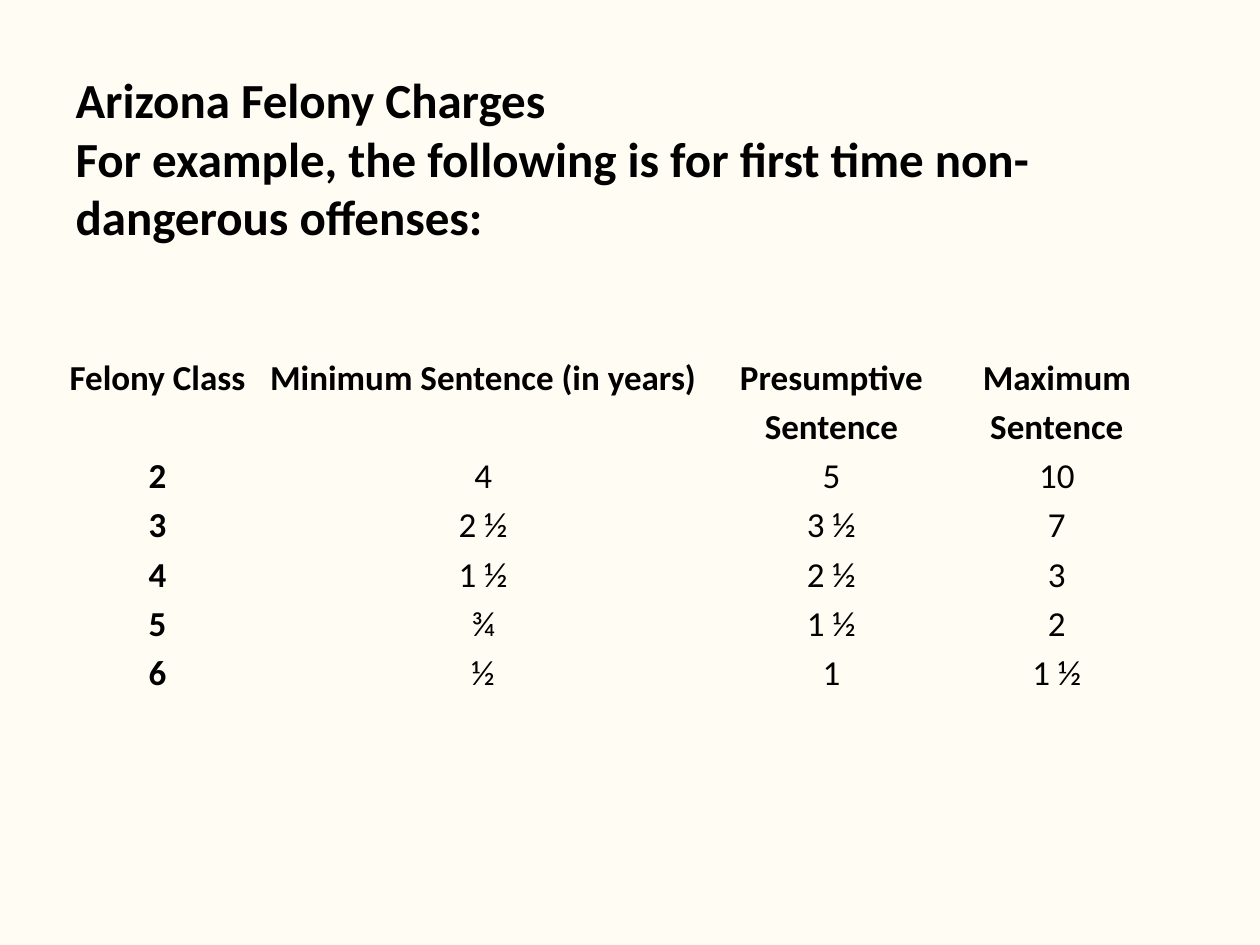
from pptx import Presentation
from pptx.dml.color import RGBColor
from pptx.enum.text import MSO_ANCHOR, MSO_AUTO_SIZE, PP_ALIGN
from pptx.oxml.ns import qn
from pptx.util import Cm, Pt

TOP = MSO_ANCHOR.TOP
NO_FIT = MSO_AUTO_SIZE.NONE
LEFT, CENTER = PP_ALIGN.LEFT, PP_ALIGN.CENTER
PLAIN_STYLE = "{2D5ABB26-0587-4C30-8999-92F81FD0307C}"

TITLE = [
    "Arizona Felony Charges",
    "For example, the following is for first time non-dangerous offenses:",
]
ROWS = [
    ("Felony Class", "Minimum Sentence (in years)", "Presumptive Sentence", "Maximum Sentence"),
    ("2", "4", "5", "10"),
    ("3", "2 ½", "3 ½", "7"),
    ("4", "1 ½", "2 ½", "3"),
    ("5", "¾", "1 ½", "2"),
    ("6", "½", "1", "1 ½"),
]
COL_WIDTHS = [3.81, 9.32, 4.72, 4.37]
HEADER_HEIGHT, ROW_HEIGHT = 1.95, 0.97
MARGIN = 1.27


def color(hex_string):
    return RGBColor.from_string(hex_string)


def format_text(tf, size, bold, align, spacing):
    for p in tf.paragraphs:
        p.alignment = align
        p.line_spacing = spacing
        for r in p.runs:
            r.font.name = "Calibri"
            r.font.size = Pt(size)
            r.font.bold = bold
            r.font.color.rgb = color("000000")


def add_title(s):
    title = s.shapes.title
    title.left, title.top = Cm(MARGIN), Cm(MARGIN)
    title.width, title.height = Cm(22.66), Cm(4.62)
    tf = title.text_frame
    tf.text = "\n".join(TITLE)
    tf.word_wrap = True
    tf.auto_size = NO_FIT
    tf.vertical_anchor = TOP
    format_text(tf, 28, True, LEFT, 1.0)


def add_sentences(s):
    heights = [HEADER_HEIGHT] + [ROW_HEIGHT] * (len(ROWS) - 1)
    table = s.shapes.add_table(
        len(ROWS), len(COL_WIDTHS), Cm(MARGIN), Cm(7.06),
        Cm(sum(COL_WIDTHS)), Cm(sum(heights)),
    ).table
    table.horz_banding = False
    table._tbl.tblPr.find(qn("a:tableStyleId")).text = PLAIN_STYLE
    for column, width in zip(table.columns, COL_WIDTHS):
        column.width = Cm(width)
    for i, (values, height) in enumerate(zip(ROWS, heights)):
        table.rows[i].height = Cm(height)
        for j, value in enumerate(values):
            cell = table.cell(i, j)
            cell.fill.background()
            cell.margin_left = cell.margin_right = 0
            cell.margin_top = cell.margin_bottom = 0
            cell.text_frame.text = value
            format_text(cell.text_frame, 20, i == 0 or j == 0, CENTER, 1.15)


def main():
    prs = Presentation()
    prs.slide_width, prs.slide_height = Cm(25.4), Cm(19.05)
    s = prs.slides.add_slide(prs.slide_layouts[5])
    s.background.fill.solid()
    s.background.fill.fore_color.rgb = color("FFFCF4")
    add_title(s)
    add_sentences(s)
    prs.save("out.pptx")


if __name__ == "__main__":
    main()
